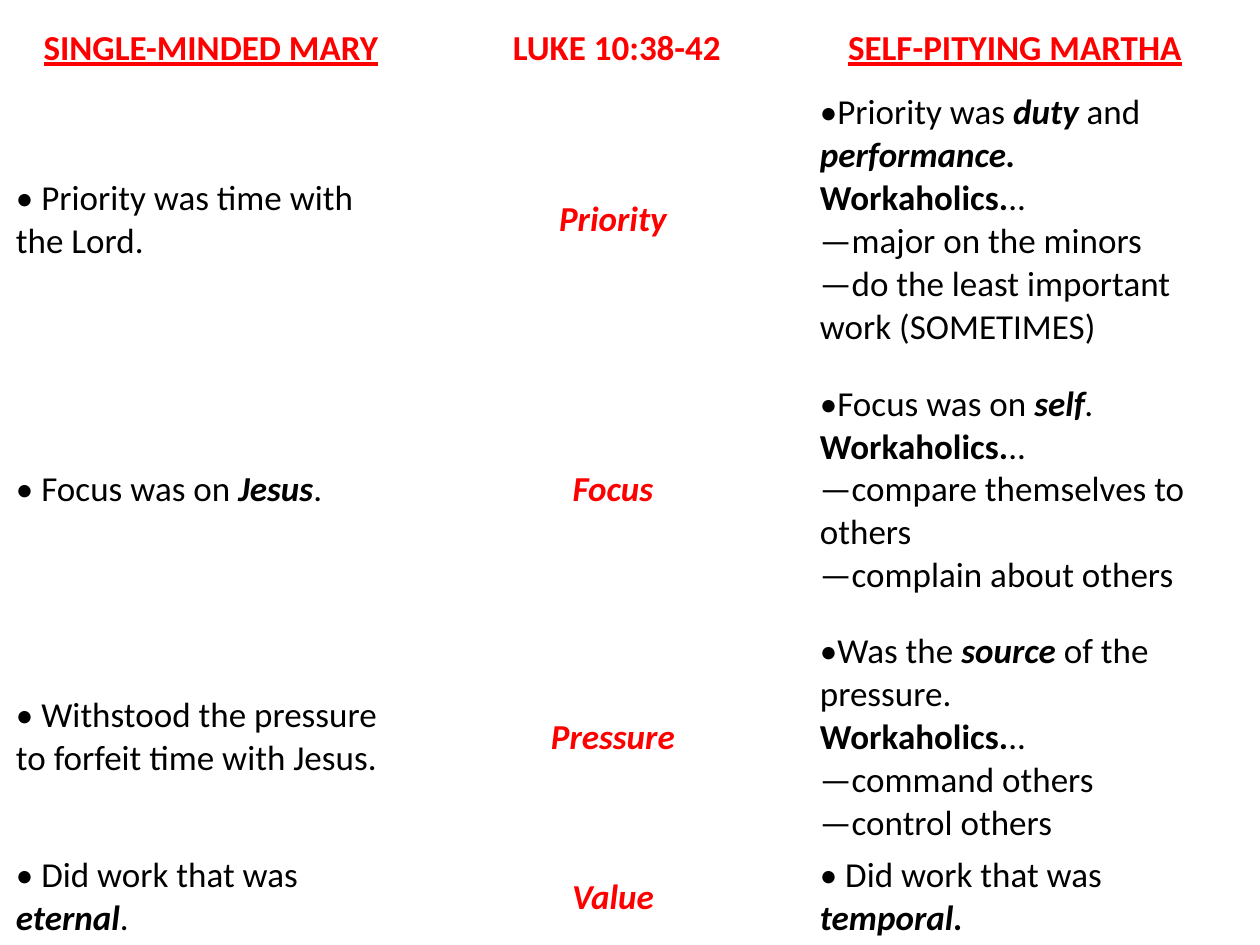
from pptx import Presentation
from pptx.dml.color import RGBColor
from pptx.enum.text import MSO_ANCHOR as Anchor, PP_ALIGN as Align
from pptx.util import Emu, Pt

PX_PER_INCH = 126
RED = RGBColor(0xFF, 0x00, 0x00)
BLACK = RGBColor(0x00, 0x00, 0x00)
FONT = "Calibri"
TEXT_SIZE = 20

COLUMN_WIDTH = 402
ROW_HEIGHTS = [73, 270, 270, 225, 95]

BOLD = {"bold": True}
STRONG = {"bold": True, "italic": True}
HEADING = {"bold": True, "color": RED}
UNDERLINED = {**HEADING, "underline": True}
TOPIC = {**STRONG, "color": RED}
WORKAHOLICS = ("Workaholics.", BOLD)

HEADINGS = [
    ("SINGLE-MINDED MARY", UNDERLINED),
    (" LUKE 10:38-42", HEADING),
    ("SELF-PITYING MARTHA", UNDERLINED),
]

COMPARISONS = [
    (
        [("• Priority was time with the Lord.", {})],
        "Priority",
        [("•Priority was ", {}), ("duty", STRONG), (" and ", {}),
         ("performance. \n", STRONG), WORKAHOLICS,
         ("..\n—major on the minors\n—do the least important work (SOMETIMES)", {})],
    ),
    (
        [("• Focus was on ", {}), ("Jesus", STRONG), (".", {})],
        "Focus",
        [("•Focus was on ", {}), ("self", STRONG), (". \n", {"italic": True}), WORKAHOLICS,
         ("..\n—compare themselves to others\n—complain about others", {})],
    ),
    (
        [("• Withstood the pressure to forfeit time with Jesus.", {})],
        "Pressure",
        [("•Was the ", {}), ("source", STRONG), (" of the pressure. \n", {}), WORKAHOLICS,
         ("..\n—command others\n—control others", {})],
    ),
    (
        [("• Did work that was ", {}), ("eternal", STRONG), (".", {})],
        "Value",
        [("• Did work that was ", {}), ("temporal.", STRONG)],
    ),
]


def px(count):
    """Turn whole pixels into EMU."""
    return Emu(round(count * 914400 / PX_PER_INCH))


def add_text(para, text, color=BLACK, bold=False, italic=False, underline=False):
    """Add formatted text to a paragraph, with a line break at each newline."""
    for index, line in enumerate(text.split("\n")):
        if index:
            para.add_line_break()
        if line:
            span = para.add_run()
            span.text = line
            font = span.font
            font.name, font.size = FONT, Pt(TEXT_SIZE)
            font.bold, font.italic, font.underline = bold, italic, underline
            font.color.rgb = color


def fill_cell(cell, spans, align=Align.LEFT):
    """Set up a clear cell and write its spans in one paragraph."""
    cell.fill.background()
    cell.vertical_anchor = Anchor.MIDDLE
    cell.margin_left = cell.margin_right = px(6)
    cell.margin_top = cell.margin_bottom = px(3)
    para = cell.text_frame.paragraphs[0]
    para.alignment = align
    for text, style in spans:
        add_text(para, text, **style)


def add_grid(page):
    """Add the empty comparison table with its column and row sizes."""
    columns = len(HEADINGS)
    frame = page.shapes.add_table(
        len(ROW_HEIGHTS), columns, px(10), px(12),
        px(COLUMN_WIDTH * columns), px(sum(ROW_HEIGHTS)))
    table = frame.table
    table.first_row = table.horz_banding = False
    for column in table.columns:
        column.width = px(COLUMN_WIDTH)
    for row, height in zip(table.rows, ROW_HEIGHTS):
        row.height = px(height)
    return table


def main():
    """Build the deck and save it."""
    deck = Presentation()
    deck.slide_width, deck.slide_height = px(1260), px(945)
    page = deck.slides.add_slide(deck.slide_layouts[6])
    table = add_grid(page)
    for column, heading in enumerate(HEADINGS):
        fill_cell(table.cell(0, column), [heading], align=Align.CENTER)
    for row, (mary, topic, martha) in enumerate(COMPARISONS, start=1):
        fill_cell(table.cell(row, 0), mary)
        fill_cell(table.cell(row, 1), [(topic, TOPIC)], align=Align.CENTER)
        fill_cell(table.cell(row, 2), martha)
    deck.save("out.pptx")


if __name__ == "__main__":
    main()
